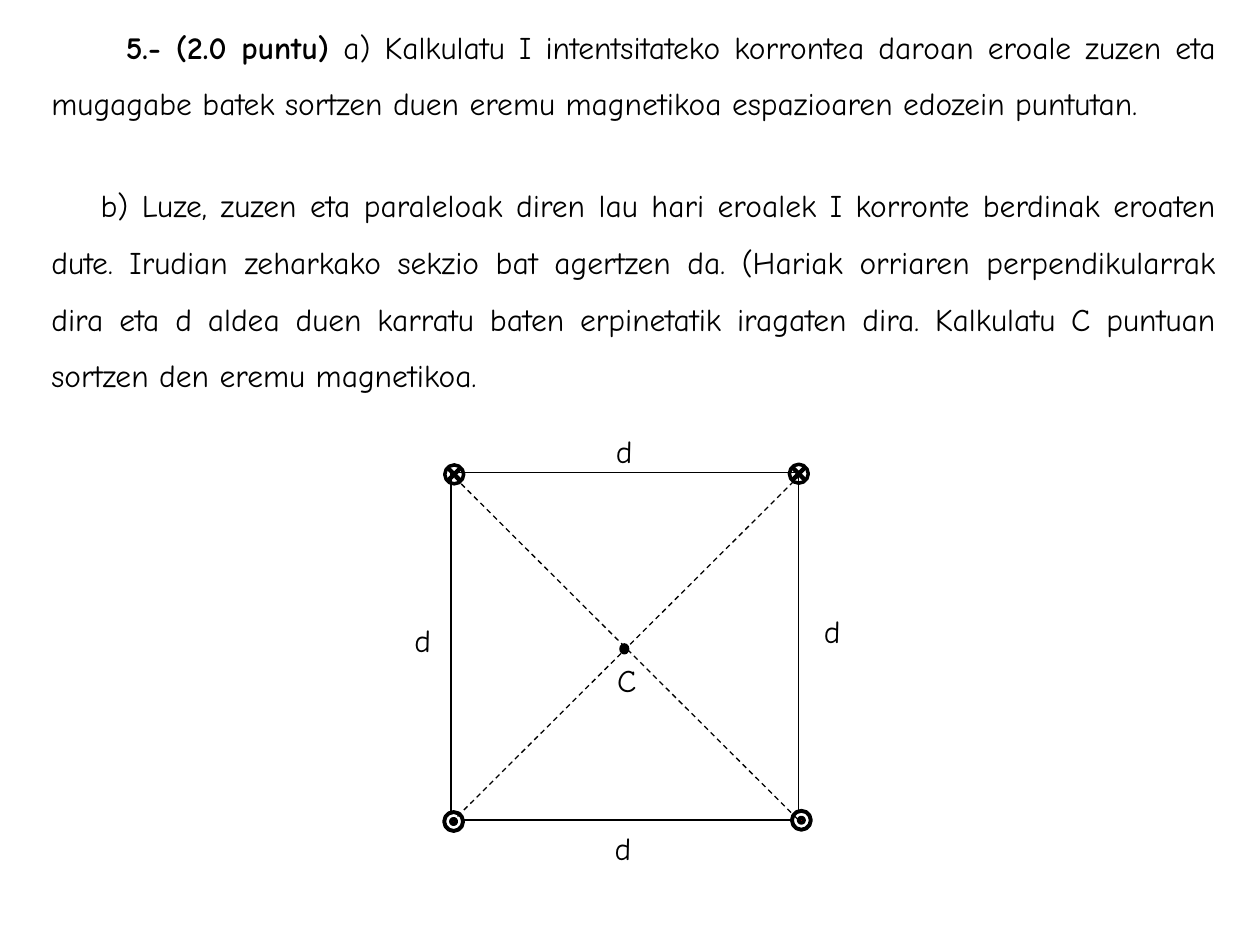
from lxml.etree import SubElement
from pptx import Presentation
from pptx.dml.color import RGBColor
from pptx.enum.dml import MSO_LINE
from pptx.enum.shapes import MSO_CONNECTOR, MSO_SHAPE
from pptx.enum.text import MSO_AUTO_SIZE, PP_ALIGN
from pptx.oxml.ns import qn
from pptx.util import Inches, Pt

BLACK, WHITE, RED = "000000", "FFFFFF", "FF0000"
FONT = {"name": "Comic Neue", "size": Pt(18)}

deck = Presentation()
deck.slide_width, deck.slide_height = Inches(10), Inches(7.5)
slide = deck.slides.add_slide(deck.slide_layouts[6])
CELL = deck.slide_width // 100  # grid of 100 columns by 75 rows


def add_text(shapes, area, pieces, wrap, layout):
    """Add one paragraph; pieces are (wording, bold) pairs."""
    box = shapes.add_textbox(*(round(v * CELL) for v in area))
    frame = box.text_frame
    frame.word_wrap = wrap
    frame.auto_size = MSO_AUTO_SIZE.SHAPE_TO_FIT_TEXT
    paragraph = frame.paragraphs[0]
    for name, value in layout.items():
        setattr(paragraph, name, value)
    for wording, bold in pieces:
        run = paragraph.add_run()
        run.text = wording
        for name, value in {**FONT, "bold": bold}.items():
            setattr(run.font, name, value)
        run.font.color.rgb = RGBColor.from_string(BLACK)
    return paragraph


def add_figure(kind, area, weight, fill=None, dash=None):
    """Add a preset shape, or a connector whose area is its two ends."""
    lengths = [round(v * CELL) for v in area]
    straight = kind is MSO_CONNECTOR.STRAIGHT  # its number equals RECTANGLE's
    add = diagram.add_connector if straight else diagram.add_shape
    figure = add(kind, *lengths)
    figure.line.color.rgb = RGBColor.from_string(BLACK)
    figure.line.width = Pt(weight)
    if dash:
        figure.line.dash_style = dash
    if straight:
        SubElement(figure._element.spPr, qn("a:effectLst"))
        return
    figure.shadow.inherit = False
    if fill:
        figure.fill.solid()
        figure.fill.fore_color.rgb = RGBColor.from_string(fill)
    else:
        figure.fill.background()


# Problem statement
questions = [
    ((3.1, 0.2, 94.4, 14.6), 0.59, 0, [
        ("5.- (2.0 puntu)", True),
        (" a) Kalkulatu I intentsitateko korrontea daroan eroale zuzen eta mugagabe "
         "batek sortzen duen eremu magnetikoa espazioaren edozein puntutan. ", False)]),
    ((3.1, 12.8, 94.4, 19.2), 0.39, 12, [
        ("b) Luze, zuzen eta paraleloak diren lau hari eroalek I korronte berdinak "
         "eroaten dute. Irudian zeharkako sekzio bat agertzen da. (Hariak orriaren "
         "perpendikularrak dira eta d aldea duen karratu baten erpinetatik iragaten "
         "dira. Kalkulatu C puntuan sortzen den eremu magnetikoa. ", False)]),
]
for area, indent, space, pieces in questions:
    paragraph = add_text(slide.shapes, area, pieces, True, {
        "alignment": PP_ALIGN.JUSTIFY, "line_spacing": 1.5, "space_before": Pt(space)})
    properties = paragraph._p.get_or_add_pPr()
    properties.set("marL", "0")
    properties.set("indent", str(Inches(indent)))

# Square of side d
diagram = slide.shapes.add_group_shape().shapes
add_figure(MSO_SHAPE.RECTANGLE, (35.8, 37.5, 27.6, 27.6), 0.75)
labels = [("d", 47.9, 33.8), ("d", 47.8, 65.3), ("d", 64.4, 48.1),
          ("d", 31.9, 48.8), ("C", 48, 52)]
for label, left, top in labels:
    add_text(diagram, (left, top, 3.5, 4), [(label, False)], False, {})

# Wires at the lower corners: current towards the viewer
WIRE, CORE, ARM = 1.5, 0.4, 0.55
for x, y in [(63.6, 65.1), (36, 65.2)]:
    for size, fill in [(WIRE, WHITE), (CORE, RED)]:
        add_figure(MSO_SHAPE.OVAL, (x - size / 2, y - size / 2, size, size), 2.25, fill)

# Wires at the upper corners: current away from the viewer
for x, y in [(36.05, 37.65), (63.4, 37.6)]:
    add_figure(MSO_SHAPE.OVAL, (x - WIRE / 2, y - WIRE / 2, WIRE, WIRE), 2)
    for rise in (ARM, -ARM):
        add_figure(MSO_CONNECTOR.STRAIGHT, (x + ARM, y + rise, x - ARM, y - rise), 2.5)

# Diagonals and centre C
for ends in [(36.1, 37.9, 63.6, 65.3), (35.8, 65.3, 63.3, 37.9)]:
    add_figure(MSO_CONNECTOR.STRAIGHT, ends, 0.75, dash=MSO_LINE.DASH)
add_figure(MSO_SHAPE.OVAL, (49.2, 51.1, 0.7, 0.8), 0.75, BLACK)

deck.save("out.pptx")
